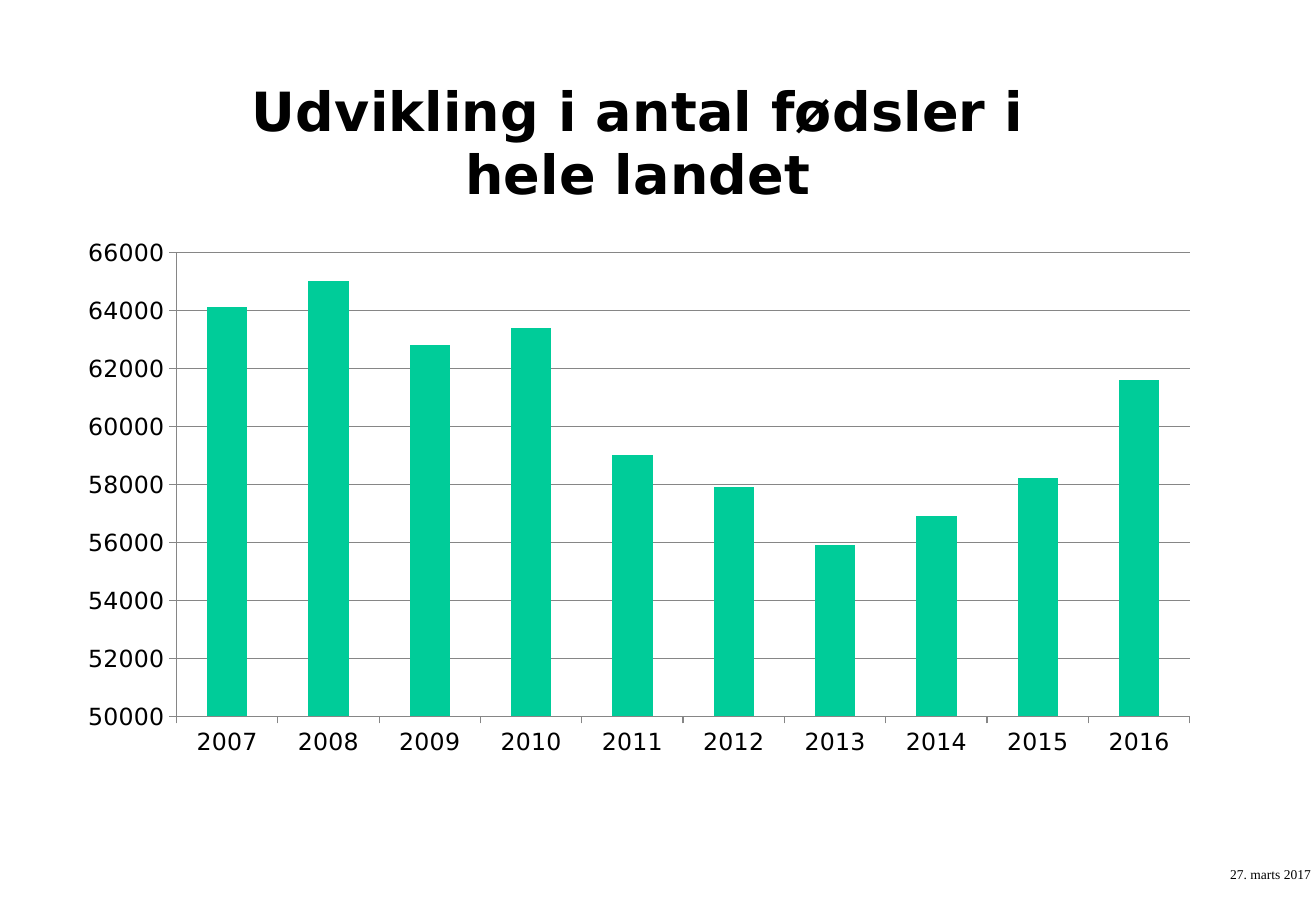
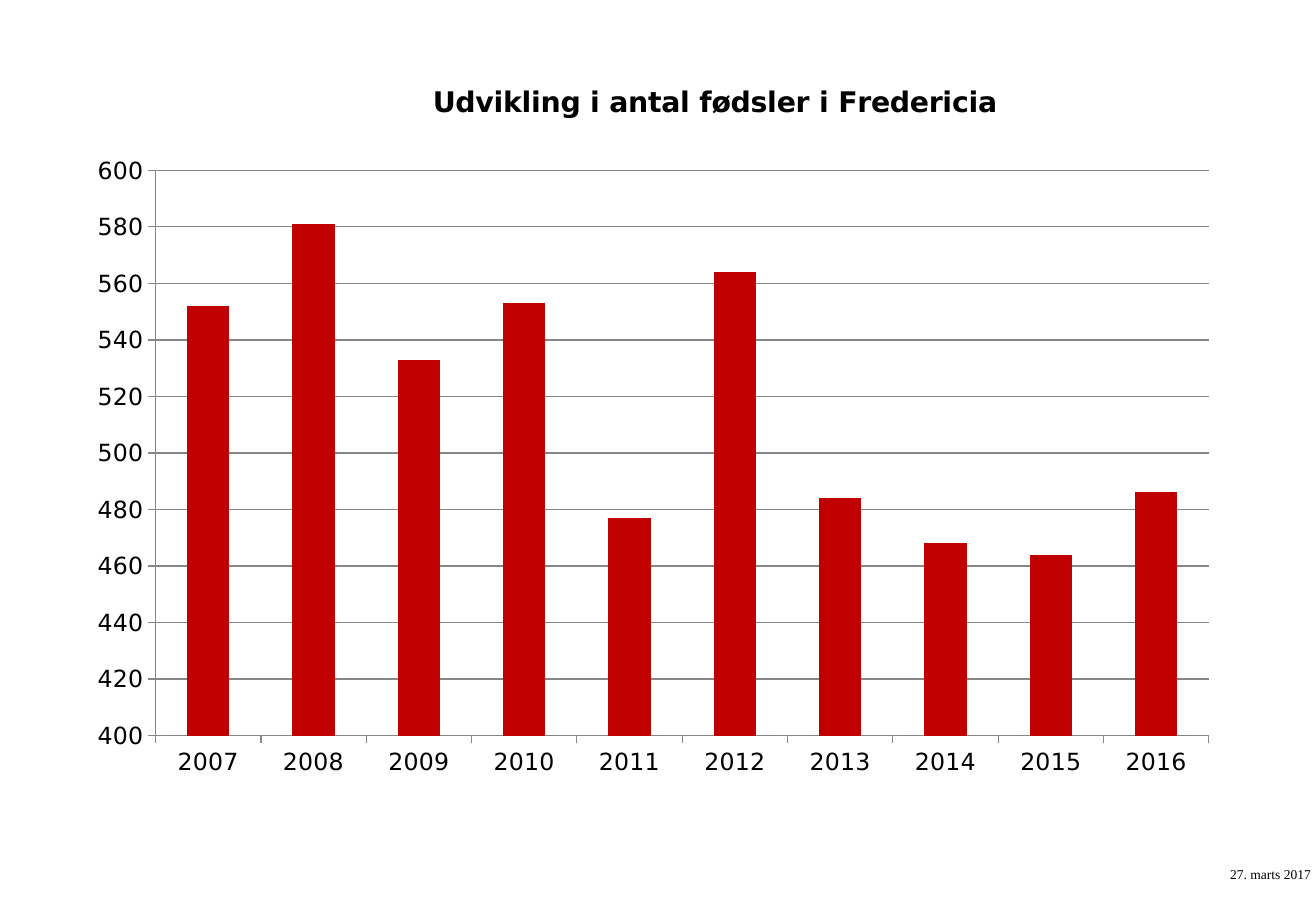
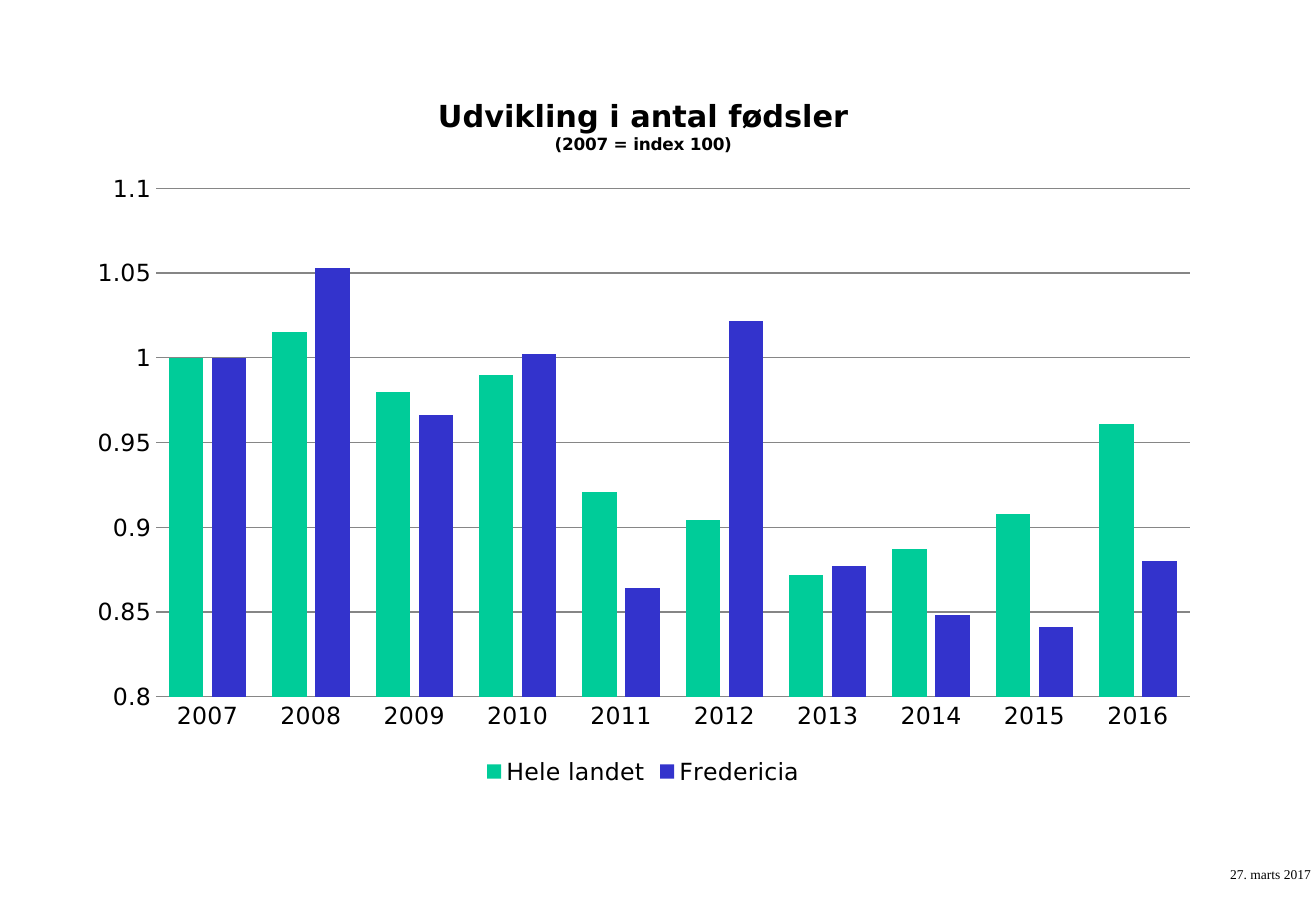
import lxml.etree
import pptx
import pptx.chart.data
import pptx.dml.color
import pptx.enum.chart
import pptx.enum.text
import pptx.oxml.ns
import pptx.util

Pt = pptx.util.Pt

# Shared content and style
YEARS = [str(year) for year in range(2007, 2017)]
DATE = "27. marts 2017"
DATE_BOX = (722, 510, 110, 16.5)
CHART_FONT, DATE_FONT = "DejaVu Sans", "Times New Roman"
BLACK, GREY, GREEN, RED, BLUE = "000000", "868686", "00CC99", "C00000", "3333CC"
LABEL_SIZE = 14

# One entry per slide; boxes are left, top, width, height in points
CHARTS = [
    {
        "title": [("Udvikling i antal fødsler i hele landet", 32)],
        "box": (38, 26, 680.5, 430.5),
        "plot": (104.6, 149.6, 600.6, 275),
        "scale": (50000, 66000, 2000),
        "gap": 150,
        "series": [("Hele landet", GREEN, [64100, 65000, 62800, 63400, 59000,
                                           57900, 55900, 56900, 58200, 61600])],
    },
    {
        "title": [("Udvikling i antal fødsler i Fredericia", 16.8)],
        "title_at": (253.5, 46.5),
        "box": (44, 43, 686, 425.5),
        "plot": (92.2, 101, 624.3, 335.1),
        "scale": (400, 600, 20),
        "gap": 150,
        "series": [("Fredericia", RED, [552, 581, 533, 553, 477,
                                        564, 484, 468, 464, 486])],
    },
    {
        "title": [("Udvikling i antal fødsler", 18), ("(2007 = index 100)", 10)],
        "box": (44, 43, 674.5, 425.5),
        "plot": (92.4, 111.7, 612.7, 301.3),
        "scale": (0.8, 1.1, 0.05),
        "gap": 75,
        "overlap": -25,
        "series": [
            ("Hele landet", GREEN, [1, 1.015, 0.98, 0.99, 0.921,
                                    0.904, 0.872, 0.887, 0.908, 0.961]),
            ("Fredericia", BLUE, [1, 1.053, 0.966, 1.002, 0.864,
                                  1.022, 0.877, 0.848, 0.841, 0.88]),
        ],
    },
]


def color(value):
    return pptx.dml.color.RGBColor.from_string(value)


def style_font(font, name, size, bold=False):
    font.name, font.size, font.bold = name, Pt(size), bold
    font.color.rgb = color(BLACK)


def style_line(line):
    line.color.rgb = color(GREY)
    line.width = Pt(0.75)


def manual_layout(parent, index, chart_box, place, inner=False):
    """Place a chart part, given in slide points, as fractions of the chart."""
    qn = pptx.oxml.ns.qn
    for old in parent.findall(qn("c:layout")):
        parent.remove(old)
    layout = lxml.etree.Element(qn("c:layout"))
    manual = lxml.etree.SubElement(layout, qn("c:manualLayout"))
    left, top, width, height = chart_box
    fractions = [(place[0] - left) / width, (place[1] - top) / height]
    fractions += [size / whole for size, whole in zip(place[2:], (width, height))]
    settings = [("layoutTarget", "inner")] if inner else []
    settings += [("xMode", "edge"), ("yMode", "edge")]
    settings += [(key, f"{value:.4f}") for key, value in zip("xywh", fractions)]
    for key, value in settings:
        lxml.etree.SubElement(manual, qn("c:" + key)).set("val", value)
    parent.insert(index, layout)


def add_title(chart, content):
    chart.has_title = True
    title = chart.chart_title
    title.include_in_layout = False
    frame = title.text_frame
    for index, (text, size) in enumerate(content["title"]):
        paragraph = frame.add_paragraph() if index else frame.paragraphs[0]
        run = paragraph.add_run()
        run.text = text
        style_font(run.font, CHART_FONT, size, bold=True)
    if "title_at" in content:
        manual_layout(title.element, 1, content["box"], content["title_at"])


def add_column_chart(slide, content):
    data = pptx.chart.data.CategoryChartData()
    data.categories = YEARS
    for name, _, values in content["series"]:
        data.add_series(name, values)
    chart = slide.shapes.add_chart(
        pptx.enum.chart.XL_CHART_TYPE.COLUMN_CLUSTERED,
        *map(Pt, content["box"]), data).chart
    style_font(chart.font, CHART_FONT, LABEL_SIZE)
    add_title(chart, content)

    # Columns
    plot = chart.plots[0]
    plot.vary_by_categories = False
    plot.gap_width = content["gap"]
    plot.overlap = content.get("overlap", 0)
    for series, (_, fill, _) in zip(plot.series, content["series"]):
        series.format.fill.solid()
        series.format.fill.fore_color.rgb = color(fill)
        series.invert_if_negative = False

    # Axes: the chart that compares series has no tick marks
    compares = len(content["series"]) > 1
    marks = pptx.enum.chart.XL_TICK_MARK
    for axis in (chart.category_axis, chart.value_axis):
        axis.major_tick_mark = marks.NONE if compares else marks.OUTSIDE
        axis.minor_tick_mark = marks.NONE
        style_font(axis.tick_labels.font, CHART_FONT, LABEL_SIZE)
        style_line(axis.format.line)
    value_axis = chart.value_axis
    value_axis.minimum_scale, value_axis.maximum_scale, value_axis.major_unit = content["scale"]
    value_axis.has_major_gridlines = True
    style_line(value_axis.major_gridlines.format.line)
    if compares:
        value_axis.format.line.fill.background()

    # Legend and plot area
    chart.has_legend = compares
    if compares:
        chart.legend.position = pptx.enum.chart.XL_LEGEND_POSITION.BOTTOM
        chart.legend.include_in_layout = False
        style_font(chart.legend.font, CHART_FONT, LABEL_SIZE)
    plot_area = chart.element.find(".//" + pptx.oxml.ns.qn("c:plotArea"))
    manual_layout(plot_area, 0, content["box"], content["plot"], inner=True)


def add_date_to_master(presentation, slide):
    """Build the date box on a slide, then move it to the shared master."""
    box = slide.shapes.add_textbox(*map(Pt, DATE_BOX))
    frame = box.text_frame
    frame.word_wrap = True
    frame.auto_size = pptx.enum.text.MSO_AUTO_SIZE.SHAPE_TO_FIT_TEXT
    run = frame.paragraphs[0].add_run()
    run.text = DATE
    style_font(run.font, DATE_FONT, 8)
    presentation.slide_master.element.cSld.spTree.append(box.element)


def main():
    presentation = pptx.Presentation()
    presentation.slide_width, presentation.slide_height = Pt(780), Pt(540)
    blank_layout = presentation.slide_layouts[6]
    for content in CHARTS:
        add_column_chart(presentation.slides.add_slide(blank_layout), content)
    add_date_to_master(presentation, presentation.slides[0])
    presentation.save("out.pptx")


if __name__ == "__main__":
    main()
